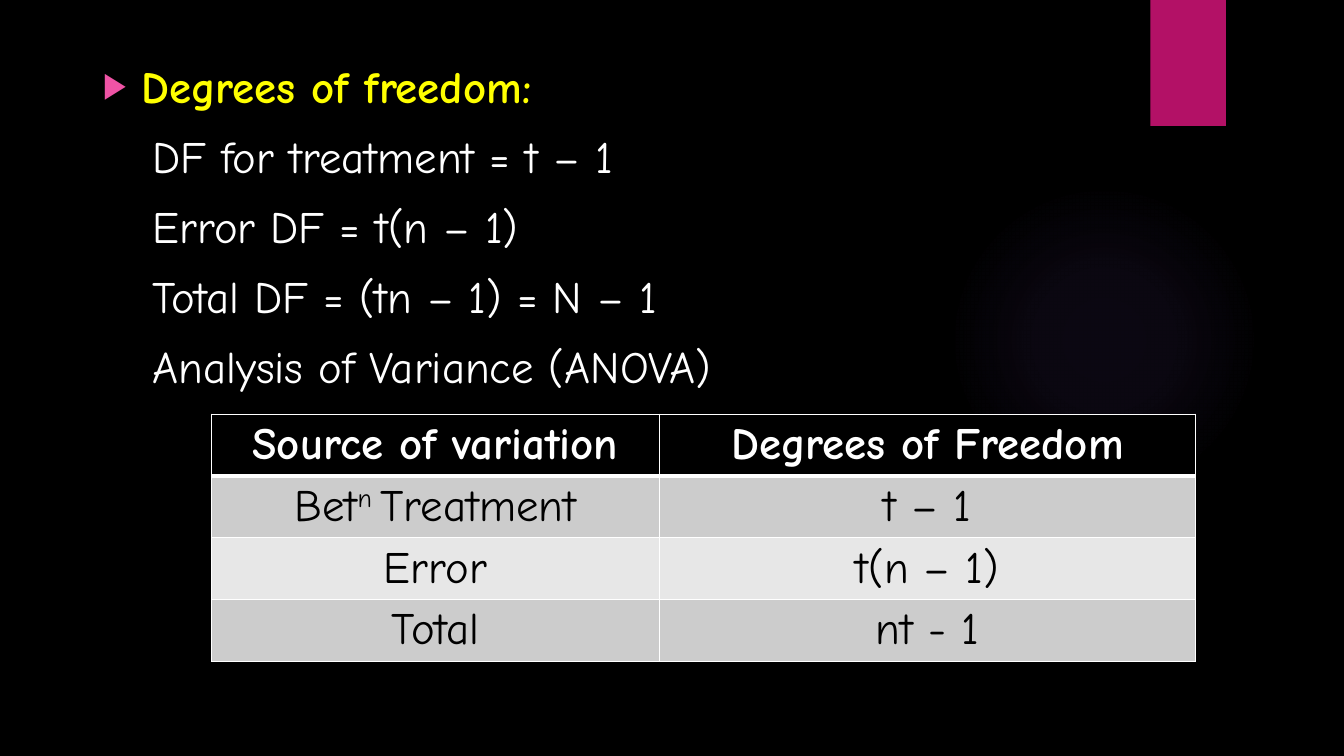
from lxml.etree import SubElement
from pptx import Presentation
from pptx.dml.color import RGBColor
from pptx.enum.shapes import MSO_SHAPE
from pptx.enum.text import MSO_ANCHOR, MSO_AUTO_SIZE, PP_ALIGN
from pptx.oxml.ns import qn
from pptx.util import Inches, Pt

HEADING = "Degrees of freedom:"
FORMULAS = [
    "DF for treatment = t – 1",
    "Error DF = t(n – 1)",
    "Total DF = (tn – 1) = N – 1",
    "Analysis of Variance (ANOVA)",
]
ROWS = [
    [["Source of variation"], ["Degrees of Freedom"]],
    [["Bet", "n ", "Treatment"], ["t – 1"]],
    [["Error"], ["t(n – 1)"]],
    [["Total"], ["nt - 1"]],
]
ROW_FILLS = ["000000", "CCCCCC", "E7E7E7", "CCCCCC"]
COLUMN_WIDTHS = [4.44, 5.32]
ROW_HEIGHT = 0.61
GLOW_STOPS = [(0, 7), (36, 6), (69, 0)]
FONT = "Comic Neue"
FONT_SIZE = 32
WHITE = "FFFFFF"


def paint(fill, color):
    fill.solid()
    fill.fore_color.rgb = RGBColor.from_string(color)


def format_font(font, color, bold=False):
    font.name = FONT
    font.size = Pt(FONT_SIZE)
    font.bold = bold
    font.color.rgb = RGBColor.from_string(color)


def add_element(parent, tag, **attributes):
    return SubElement(parent, qn(tag), {key: str(value) for key, value in attributes.items()})


def add_plain_shape(slide, kind, left, top, width, height, color):
    shape = slide.shapes.add_shape(kind, Inches(left), Inches(top), Inches(width), Inches(height))
    shape.shadow.inherit = False
    shape.line.fill.background()
    paint(shape.fill, color)
    return shape


def add_glow(slide):
    glow = add_plain_shape(slide, MSO_SHAPE.OVAL, 9.41, 1.83, 3.08, 3.08, "9B6BF2")
    properties = glow._element.spPr
    solid = properties.find(qn("a:solidFill"))
    gradient = add_element(properties, "a:gradFill", rotWithShape=1)
    properties.replace(solid, gradient)
    stops = add_element(gradient, "a:gsLst")
    for position, opacity in GLOW_STOPS:
        stop = add_element(stops, "a:gs", pos=position * 1000)
        color = add_element(stop, "a:srgbClr", val="9B6BF2")
        add_element(color, "a:alpha", val=opacity * 1000)
    circle = add_element(gradient, "a:path", path="circle")
    add_element(circle, "a:fillToRect", l=50000, t=50000, r=50000, b=50000)


def set_margins(para, left, indent):
    properties = para._p.get_or_add_pPr()
    properties.set("marL", str(Inches(left)))
    properties.set("indent", str(Inches(indent)))
    return properties


def fill_body(body):
    body.left, body.top, body.width, body.height = map(Inches, (0.92, 0.53, 11.5, 6.42))
    frame = body.text_frame
    frame.word_wrap = True
    frame.auto_size = MSO_AUTO_SIZE.NONE
    frame.vertical_anchor = MSO_ANCHOR.TOP
    frame.text = "\n".join([HEADING, *FORMULAS])
    for index, para in enumerate(frame.paragraphs):
        is_heading = index == 0
        para.space_before = Pt(0 if is_heading else 11.7)
        if is_heading:
            properties = set_margins(para, 0.38, -0.38)
            color = add_element(properties, "a:buClr")
            add_element(color, "a:srgbClr", val="EF53A5")
            add_element(properties, "a:buSzPct", val=80000)
            add_element(properties, "a:buFont", typeface="Arial")
            add_element(properties, "a:buChar", char="▶")
        else:
            add_element(set_margins(para, 0.49, 0), "a:buNone")
        for span in para.runs:
            format_font(span.font, "FFFF00" if is_heading else WHITE, is_heading)


def set_borders(cell, is_header, below_header):
    properties = cell._tc.get_or_add_tcPr()
    widths = {"L": 1, "R": 1, "T": 3 if below_header else 1, "B": 3 if is_header else 1}
    for side, width in widths.items():
        line = add_element(properties, f"a:ln{side}", w=Pt(width))
        solid = add_element(line, "a:solidFill")
        add_element(solid, "a:srgbClr", val=WHITE)


def add_anova_table(slide):
    frame = slide.shapes.add_table(
        len(ROWS), len(COLUMN_WIDTHS), Inches(2.1), Inches(4.11),
        Inches(sum(COLUMN_WIDTHS)), Inches(ROW_HEIGHT * len(ROWS)),
    )
    table = frame.table
    for column, width in zip(table.columns, COLUMN_WIDTHS):
        column.width = Inches(width)
    for row_index, (row, fill) in enumerate(zip(ROWS, ROW_FILLS)):
        table.rows[row_index].height = Inches(ROW_HEIGHT)
        is_header = row_index == 0
        for column_index, pieces in enumerate(row):
            cell = table.cell(row_index, column_index)
            set_borders(cell, is_header, row_index == 1)
            paint(cell.fill, fill)
            para = cell.text_frame.paragraphs[0]
            para.alignment = PP_ALIGN.CENTER
            for piece in pieces:
                span = para.add_run()
                span.text = piece
                format_font(span.font, WHITE if is_header else "000000", is_header)
                if piece == "n ":
                    span.font._element.set("baseline", "30000")


def main():
    deck = Presentation()
    deck.slide_width, deck.slide_height = Inches(13.33), Inches(7.5)
    slide = deck.slides.add_slide(deck.slide_layouts[1])
    paint(slide.background.fill, "000000")
    title = slide.shapes.title._element
    title.getparent().remove(title)
    add_glow(slide)
    add_plain_shape(slide, MSO_SHAPE.RECTANGLE, 11.41, 0, 0.75, 1.25, "B31166")
    fill_body(slide.placeholders[1])
    add_anova_table(slide)
    deck.save("out.pptx")


if __name__ == "__main__":
    main()
